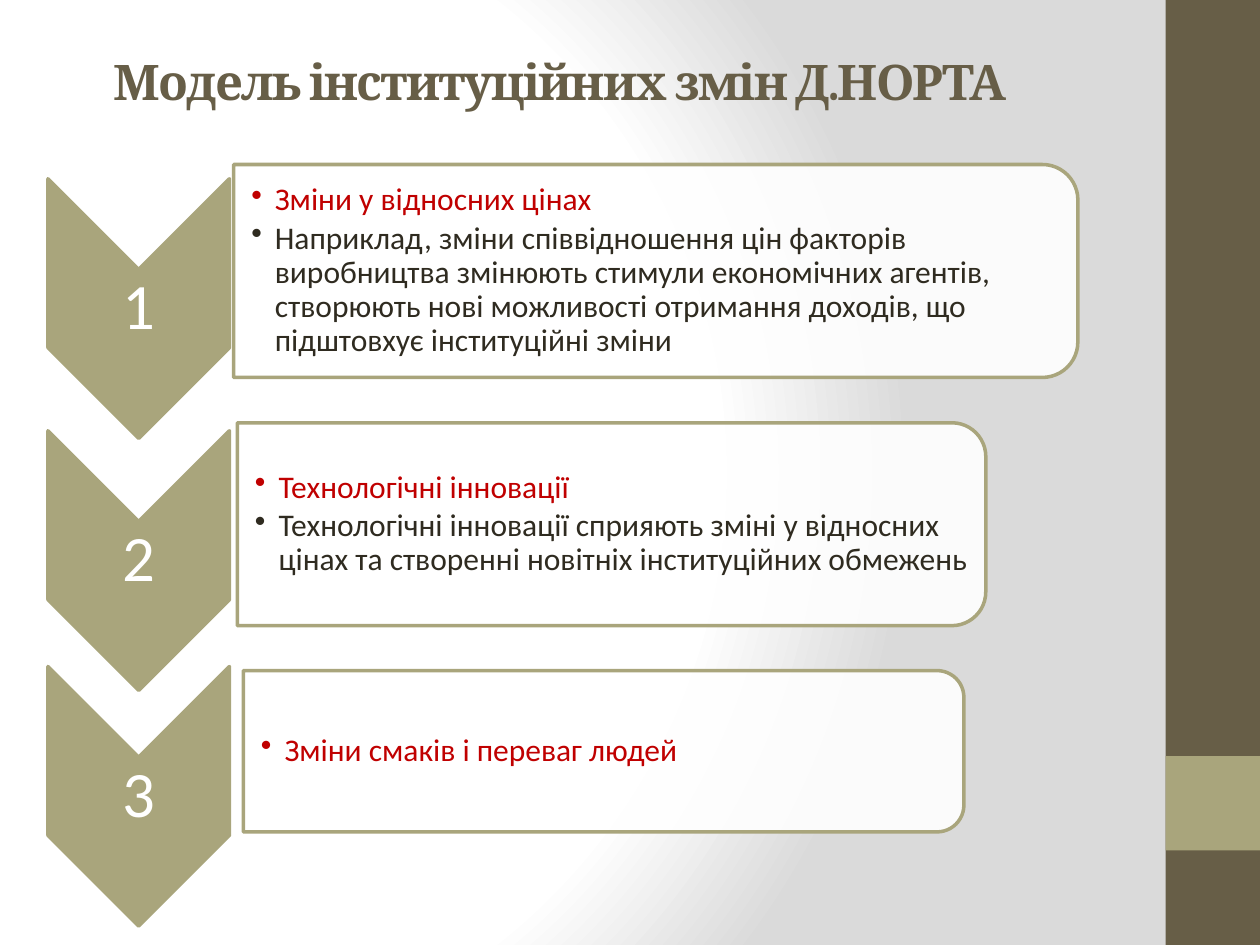
from dataclasses import dataclass

from lxml.etree import SubElement
from pptx import Presentation
from pptx.dml.color import RGBColor
from pptx.enum.shapes import MSO_SHAPE as Preset
from pptx.enum.text import MSO_ANCHOR as Anchor, PP_ALIGN as Align
from pptx.oxml import parse_xml
from pptx.oxml.ns import nsdecls, qn
from pptx.util import Pt


@dataclass(frozen=True)
class Theme:
    brown: str = "675E47"
    olive: str = "A9A57C"
    white: str = "FFFFFF"
    gray: str = "DADADA"
    red: str = "C00000"
    dark: str = "2F2B20"
    heading_font: str = "Cambria"
    body_font: str = "Calibri"
    title_size: float = 28
    number_size: float = 37
    body_size: float = 18


THEME = Theme()
WIDTH, HEIGHT = 720, 540
SIDEBAR_LEFT, SIDEBAR_WIDTH = 666, 54
CHEVRON_LEFT, CHEVRON_WIDTH, CHEVRON_HEIGHT = 27.4, 103.7, 148.3
CORNER_INSET = 0.0488

TITLE = "Модель інституційних змін Д.НОРТА"
STEPS = [
    {
        "chevron_top": 102.2,
        "box": (133.5, 94, 482.4, 121.7),
        "lines": [
            "Зміни у відносних цінах",
            "Наприклад, зміни співвідношення цін факторів виробництва змінюють "
            "стимули економічних агентів, створюють нові можливості отримання "
            "доходів, що підштовхує інституційні зміни",
        ],
    },
    {
        "chevron_top": 246.2,
        "box": (135.6, 241.6, 427.7, 115.9),
        "lines": [
            "Технологічні інновації",
            "Технологічні інновації сприяють зміні у відносних цінах та "
            "створенні новітніх інституційних обмежень",
        ],
    },
    {
        "chevron_top": 380.9,
        "box": (139, 383.2, 411.8, 92.2),
        "lines": ["Зміни смаків і переваг людей"],
    },
]


def color(value):
    return RGBColor.from_string(value)


def set_background(slide):
    slide.background.fill.solid()
    properties = slide.background._cSld.bg.bgPr
    stops = "".join(
        f'<a:gs pos="{position * 1000}"><a:srgbClr val="{value}"/></a:gs>'
        for position, value in [(0, THEME.white), (75, THEME.white), (100, THEME.gray)]
    )
    gradient = parse_xml(
        f'<a:gradFill {nsdecls("a")} rotWithShape="1"><a:gsLst>{stops}</a:gsLst>'
        '<a:path path="circle"><a:fillToRect l="20000" t="50000" r="100000" b="50000"/>'
        "</a:path></a:gradFill>"
    )
    properties.replace(properties.find(qn("a:solidFill")), gradient)


def add_shape(slide, preset, bounds, fill, line=None):
    shape = slide.shapes.add_shape(preset, *map(Pt, bounds))
    shape.shadow.inherit = False
    shape.fill.solid()
    shape.fill.fore_color.rgb = color(fill)
    if line:
        shape.line.color.rgb = color(line)
        shape.line.width = Pt(2)
    else:
        shape.line.fill.background()
    return shape


def add_rotated(slide, preset, left, top, width, height, fill):
    bounds = (left + (width - height) / 2, top + (height - width) / 2, height, width)
    shape = add_shape(slide, preset, bounds, fill, THEME.olive)
    shape.rotation = 90
    return shape


def add_text(slide, bounds, lines, insets, font, size, colors, bold=False):
    text_frame = slide.shapes.add_textbox(*map(Pt, bounds)).text_frame
    text_frame.word_wrap = True
    text_frame.vertical_anchor = Anchor.MIDDLE
    (text_frame.margin_left, text_frame.margin_top,
     text_frame.margin_right, text_frame.margin_bottom) = map(Pt, insets)
    text_frame.text = "\n".join(lines)
    for paragraph, value in zip(text_frame.paragraphs, colors):
        run_font = paragraph.runs[0].font
        run_font.name, run_font.size, run_font.bold = font, Pt(size), bold
        run_font.color.rgb = color(value)
    return text_frame.paragraphs


def add_title(slide):
    paragraph, = add_text(slide, (36.7, 9.4, 566.6, 73.4), [TITLE], (7.2, 3.6, 7.2, 3.6),
                          THEME.heading_font, THEME.title_size, [THEME.brown], True)
    paragraph.alignment = Align.CENTER
    paragraph.runs[0].font._element.set("spc", "-100")


def add_step(slide, number, step):
    top = step["chevron_top"]
    add_rotated(slide, Preset.CHEVRON, CHEVRON_LEFT, top,
                CHEVRON_WIDTH, CHEVRON_HEIGHT, THEME.olive)
    label_bounds = (CHEVRON_LEFT, top + CHEVRON_WIDTH / 2,
                    CHEVRON_WIDTH, CHEVRON_HEIGHT - CHEVRON_WIDTH)
    label, = add_text(slide, label_bounds, [str(number)], (2.2,) * 4,
                      THEME.body_font, THEME.number_size, [THEME.white])
    label.alignment = Align.CENTER
    label.line_spacing = 0.9

    left, top, width, height = step["box"]
    box = add_rotated(slide, Preset.ROUND_2_SAME_RECTANGLE, left, top, width, height, THEME.white)
    fill_color = box._element.spPr.find(qn("a:solidFill"))[0]
    SubElement(fill_color, qn("a:alpha"), val="90000")
    inset = height * CORNER_INSET
    paragraphs = add_text(slide, (left, top + inset, width - inset, height - 2 * inset),
                          step["lines"], (10.1, 0.7, 0.7, 0.7),
                          THEME.body_font, THEME.body_size, [THEME.red, THEME.dark])
    for paragraph in paragraphs:
        paragraph.level = 1
        paragraph.line_spacing = 0.9
        paragraph.space_after = Pt(2.7)
        properties = paragraph._p.get_or_add_pPr()
        properties.set("marL", str(Pt(13.5)))
        properties.set("indent", str(-Pt(13.5)))
        SubElement(properties, qn("a:buChar"), char="•")


def main():
    presentation = Presentation()
    presentation.slide_width, presentation.slide_height = Pt(WIDTH), Pt(HEIGHT)
    slide = presentation.slides.add_slide(presentation.slide_layouts[6])
    set_background(slide)
    add_shape(slide, Preset.RECTANGLE, (SIDEBAR_LEFT, 0, SIDEBAR_WIDTH, HEIGHT), THEME.brown)
    add_shape(slide, Preset.RECTANGLE, (SIDEBAR_LEFT, 432, SIDEBAR_WIDTH, 54), THEME.olive)
    add_title(slide)
    for number, step in enumerate(STEPS, 1):
        add_step(slide, number, step)
    presentation.save("out.pptx")


if __name__ == "__main__":
    main()
